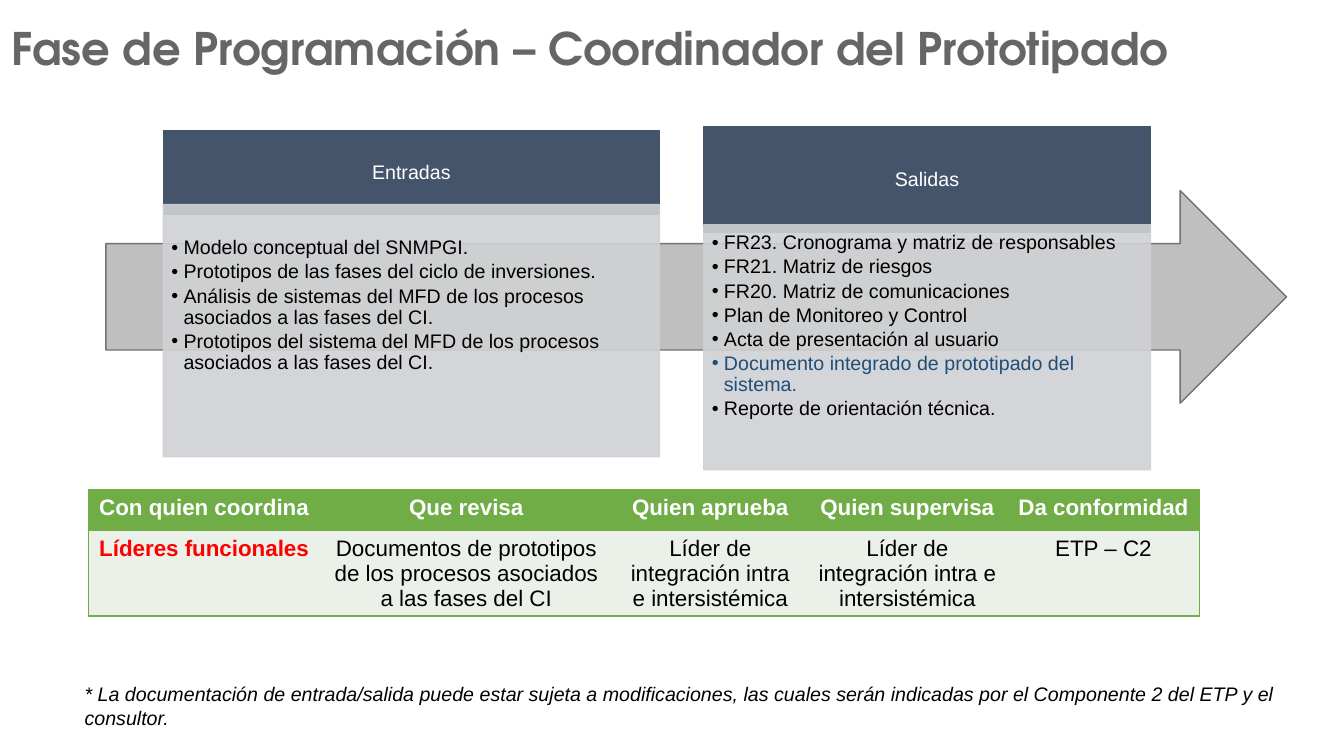
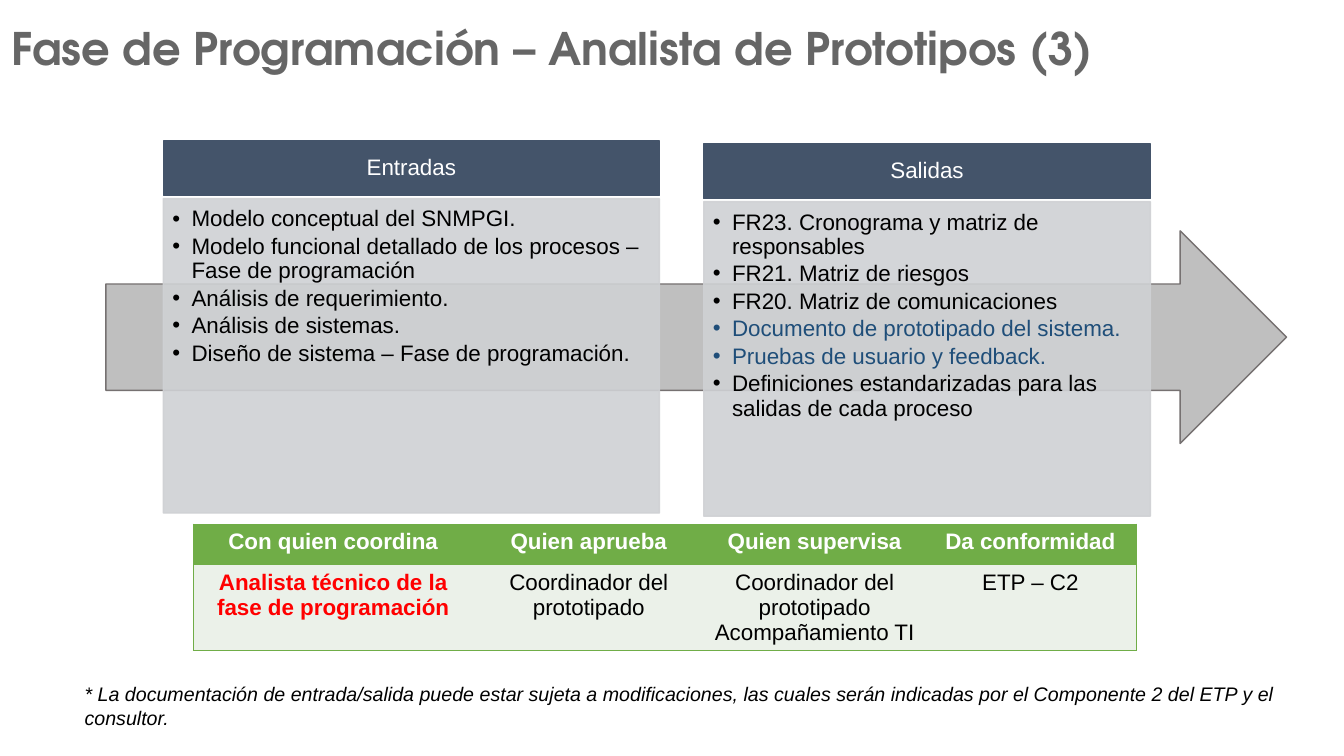
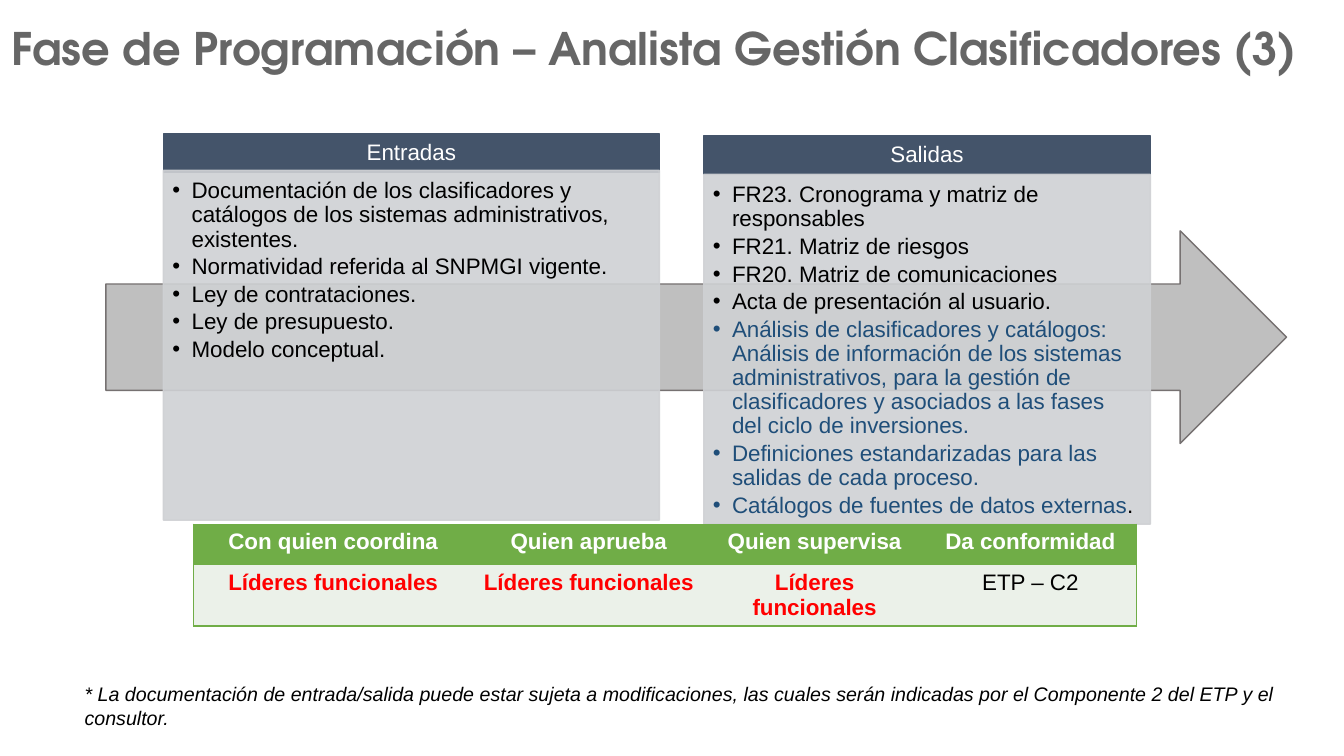
from dataclasses import dataclass

from lxml.etree import SubElement
from pptx import Presentation
from pptx.dml.color import RGBColor
from pptx.enum.shapes import MSO_SHAPE
from pptx.enum.text import MSO_ANCHOR, MSO_AUTO_SIZE, PP_ALIGN
from pptx.oxml.ns import qn
from pptx.util import Emu, Pt

EMU_PER_PX = 9144
COLORS = {
    "title": "666666", "arrow": "BFBFBF", "arrow_line": "767171",
    "header": "44546A", "panel": "CFD1D4", "white": "FFFFFF",
    "black": "000000", "blue": "1F4E79", "red": "FF0000",
    "green": "70AD47", "pale": "EBF1E9",
}
BODY_FONT, TITLE_FONT = "Arial", "TeX Gyre Adventor"
TWO_CONTENT_LAYOUT = 3
NO_STYLE_TABLE = "{2D5ABB26-0587-4C30-8999-92F81FD0307C}"
FOOTNOTE = (
    "* La documentación de entrada/salida puede estar sujeta a modificaciones, "
    "las cuales serán indicadas por el Componente 2 del ETP y el consultor."
)
COMMON_OUTPUTS = [
    "FR23. Cronograma y matriz de responsables",
    "FR21. Matriz de riesgos",
    "FR20. Matriz de comunicaciones",
]
ANALYST_TABLE = {
    "left": 192, "top": 520, "widths": (277, 230, 218, 210),
    "headings": ("Con quien coordina", "Quien aprueba", "Quien supervisa", "Da conformidad"),
}


@dataclass
class TextScale:
    """Text size of the panels with the insets and indent that go with it."""

    size: int
    header_insets: tuple
    panel_insets: tuple
    indent: int


@dataclass
class Block:
    """Top and height of a header and its panel, with the listed items."""

    header: tuple
    panel: tuple
    items: list
    drop: int = 0


SMALL = TextScale(14, (11, 6, 11, 6), (8, 8, 11, 12), 12)
LARGE = TextScale(16, (12, 7, 12, 7), (9, 9, 12, 14), 19)


def px(value):
    """Turn px into EMU."""
    return Emu(value * EMU_PER_PX)


def color(name):
    """Return the named colour."""
    return RGBColor.from_string(COLORS[name])


def paint(shape, fill, line):
    """Give a shape a solid fill and a 1 pt line."""
    shape.fill.solid()
    shape.fill.fore_color.rgb = color(fill)
    shape.line.color.rgb = color(line)
    shape.line.width = Pt(1)


def place(shape, left, top, width, height):
    """Set the position and size of a shape."""
    shape.left, shape.top = px(left), px(top)
    shape.width, shape.height = px(width), px(height)


def set_opacity(shape, percent):
    """Make the fill and line of a shape partly transparent."""
    for element in list(shape.element.spPr.iter(qn("a:srgbClr"))):
        SubElement(element, qn("a:alpha"), val=str(percent * 1000))


def set_frame(frame, insets, anchor):
    """Set wrapping, insets (left, top, right, bottom) and anchor."""
    frame.word_wrap = True
    frame.auto_size = MSO_AUTO_SIZE.NONE
    frame.vertical_anchor = anchor
    frame.margin_left, frame.margin_top, frame.margin_right, frame.margin_bottom = map(px, insets)


def write(paragraph, text, size=16, ink="black", font=BODY_FONT, bold=False,
          italic=False, align=PP_ALIGN.LEFT):
    """Add a formatted run to a paragraph."""
    paragraph.alignment = align
    run = paragraph.add_run()
    run.text = text
    run.font.name, run.font.size = font, Pt(size)
    run.font.bold, run.font.italic = bold, italic
    run.font.color.rgb = color(ink)


def next_paragraph(frame, index):
    """Return the first paragraph of a frame or a new one."""
    return frame.add_paragraph() if index else frame.paragraphs[0]


def add_title(slide, text):
    """Fill the title placeholder."""
    title = slide.shapes.title
    place(title, 1, -4, 1332, 102)
    set_frame(title.text_frame, (10, 10, 10, 10), MSO_ANCHOR.MIDDLE)
    write(title.text_frame.paragraphs[0], text, size=32, ink="title", font=TITLE_FONT, bold=True)


def add_preset(slide, preset, box, fill, line):
    """Add a preset shape without shadow."""
    shape = slide.shapes.add_shape(preset, *map(px, box))
    shape.shadow.inherit = False
    paint(shape, fill, line)
    return shape


def add_header(slide, text, box, scale):
    """Add the dark band above a panel."""
    header = add_preset(slide, MSO_SHAPE.RECTANGLE, box, "header", "header")
    set_frame(header.text_frame, scale.header_insets, MSO_ANCHOR.MIDDLE)
    paragraph = header.text_frame.paragraphs[0]
    paragraph.line_spacing = 0.9
    write(paragraph, text, size=scale.size, ink="white", align=PP_ALIGN.CENTER)


def fill_panel(slide, panel, box, block, scale):
    """Turn a body placeholder into a translucent bulleted panel in front."""
    slide.shapes.element.append(panel.element)
    place(panel, *box)
    paint(panel, "panel", "panel")
    set_opacity(panel, 90)
    left, top, right, bottom = scale.panel_insets
    set_frame(panel.text_frame, (left, top + block.drop, right, bottom), MSO_ANCHOR.TOP)
    for index, item in enumerate(block.items):
        paragraph = next_paragraph(panel.text_frame, index)
        properties = paragraph._p.get_or_add_pPr()
        properties.set("marL", str(px(scale.indent)))
        properties.set("indent", str(px(-scale.indent)))
        paragraph.line_spacing = 0.9
        paragraph.space_before = Pt(0)
        paragraph.space_after = Pt(scale.size * 0.15)
        for text, ink in [(item, "black")] if isinstance(item, str) else item:
            write(paragraph, text, size=scale.size, ink=ink)


def add_flow(slide, arrow_top, scale, inputs, outputs):
    """Add the arrow and, over it, the input and output panels."""
    add_preset(slide, MSO_SHAPE.RIGHT_ARROW, (105, arrow_top, 1171, 211), "arrow", "arrow_line")
    bodies = [shape for shape in slide.placeholders if shape.placeholder_format.idx > 0]
    columns = [("Entradas", 162, 492, inputs), ("Salidas", 698, 443, outputs)]
    for body, (name, left, width, block) in zip(bodies, columns):
        header_top, header_height = block.header
        panel_top, panel_height = block.panel
        add_header(slide, name, (left, header_top, width, header_height), scale)
        fill_panel(slide, body, (left, panel_top, width, panel_height), block, scale)


def set_border(cell, side):
    """Draw one green 1 pt border of a cell."""
    line = SubElement(cell._tc.get_or_add_tcPr(), qn(f"a:ln{side}"), w=str(Pt(1)))
    solid = SubElement(line, qn("a:solidFill"))
    SubElement(solid, qn("a:srgbClr"), val=COLORS["green"])


def fill_cell(cell, text, fill, sides, ink, bold):
    """Border and fill a cell and write one centred paragraph per line."""
    for side in sides:
        set_border(cell, side)
    cell.fill.solid()
    cell.fill.fore_color.rgb = color(fill)
    for index, line in enumerate(text.split("\n")):
        write(next_paragraph(cell.text_frame, index), line, ink=ink, bold=bold,
              align=PP_ALIGN.CENTER)


def add_roles(slide, left, top, widths, body_height, headings, roles, red_count):
    """Add the table of roles, its first red_count roles in red."""
    heights = (41, body_height)
    frame = slide.shapes.add_table(2, len(widths), px(left), px(top),
                                   px(sum(widths)), px(sum(heights)))
    table = frame.table
    table.first_row = table.horz_banding = False
    for style in frame.element.iter(qn("a:tableStyleId")):
        style.text = NO_STYLE_TABLE
    for row, height in zip(table.rows, heights):
        row.height = px(height)
    last = len(widths) - 1
    for index, (width, heading, role) in enumerate(zip(widths, headings, roles)):
        table.columns[index].width = px(width)
        outer = {0: "L", last: "R"}.get(index, "")
        is_red = index < red_count
        fill_cell(table.cell(0, index), heading, "green", outer + "T", "white", True)
        fill_cell(table.cell(1, index), role, "pale", outer + "B",
                  "red" if is_red else "black", is_red)


def add_footnote(slide):
    """Add the shared note at the bottom."""
    box = slide.shapes.add_textbox(px(74), px(672), px(1202), px(57))
    set_frame(box.text_frame, (10, 5, 10, 5), MSO_ANCHOR.TOP)
    write(box.text_frame.paragraphs[0], FOOTNOTE, size=14, italic=True)


def add_phase_slide(presentation, title, flow, roles):
    """Add one slide with its title, flow, table of roles and note."""
    slide = presentation.slides.add_slide(presentation.slide_layouts[TWO_CONTENT_LAYOUT])
    add_title(slide, title)
    add_flow(slide, **flow)
    add_roles(slide, **roles)
    add_footnote(slide)


def add_coordinator(presentation):
    """Add the slide of the prototyping coordinator."""
    inputs = Block((130, 83), (203, 250), [
        "Modelo conceptual del SNMPGI.",
        "Prototipos de las fases del ciclo de inversiones.",
        "Análisis de sistemas del MFD de los procesos asociados a las fases del CI.",
        "Prototipos del sistema del MFD de los procesos asociados a las fases del CI.",
    ], drop=25)
    outputs = Block((126, 105), (223, 243), COMMON_OUTPUTS + [
        "Plan de Monitoreo y Control",
        "Acta de presentación al usuario",
        [("Documento integrado de prototipado del sistema.", "blue")],
        "Reporte de orientación técnica.",
    ])
    roles = {
        "left": 88, "top": 486, "widths": (229, 291, 193, 198, 191), "body_height": 84,
        "headings": ("Con quien coordina", "Que revisa", "Quien aprueba",
                     "Quien supervisa", "Da conformidad"),
        "roles": ("Líderes funcionales",
                  "Documentos de prototipos de los procesos asociados a las fases del CI",
                  "Líder de integración intra e intersistémica",
                  "Líder de integración intra e intersistémica",
                  "ETP – C2"),
        "red_count": 1,
    }
    flow = {"arrow_top": 189, "scale": SMALL, "inputs": inputs, "outputs": outputs}
    add_phase_slide(presentation, "Fase de Programación – Coordinador del Prototipado", flow, roles)


def add_prototype_analyst(presentation):
    """Add the slide of the prototype analysts."""
    inputs = Block((140, 54), (197, 312), [
        "Modelo conceptual del SNMPGI.",
        "Modelo funcional detallado de los procesos – Fase de programación",
        "Análisis de requerimiento.",
        "Análisis de sistemas.",
        "Diseño de sistema – Fase de programación.",
    ])
    outputs = Block((143, 54), (200, 312), COMMON_OUTPUTS + [
        [("Documento de prototipado del sistema.", "blue")],
        [("Pruebas de usuario y feedback.", "blue")],
        "Definiciones estandarizadas para las salidas de cada proceso",
    ])
    roles = ANALYST_TABLE | {
        "body_height": 84,
        "roles": ("Analista técnico de la fase de programación",
                  "Coordinador del prototipado",
                  "Coordinador del prototipado\nAcompañamiento TI",
                  "ETP – C2"),
        "red_count": 1,
    }
    flow = {"arrow_top": 229, "scale": LARGE, "inputs": inputs, "outputs": outputs}
    add_phase_slide(presentation, "Fase de Programación – Analista de Prototipos (3)", flow, roles)


def add_classifier_analyst(presentation):
    """Add the slide of the classifier management analysts."""
    inputs = Block((133, 38), (169, 347), [
        "Documentación de los clasificadores y catálogos de los sistemas "
        "administrativos, existentes.",
        "Normatividad referida al SNPMGI vigente.",
        "Ley de contrataciones.",
        "Ley de presupuesto.",
        "Modelo conceptual.",
    ])
    outputs = Block((135, 38), (173, 347), COMMON_OUTPUTS + [
        "Acta de presentación al usuario.",
        [("Análisis de clasificadores y catálogos: Análisis de información de los "
          "sistemas administrativos, para la gestión de clasificadores y asociados "
          "a las fases del ciclo de inversiones.", "blue")],
        [("Definiciones estandarizadas para las salidas de cada proceso.", "blue")],
        [("Catálogos de fuentes de datos externas", "blue"), (".", "black")],
    ])
    roles = ANALYST_TABLE | {
        "body_height": 60,
        "roles": ("Líderes funcionales",) * 3 + ("ETP – C2",),
        "red_count": 3,
    }
    flow = {"arrow_top": 229, "scale": LARGE, "inputs": inputs, "outputs": outputs}
    add_phase_slide(presentation, "Fase de Programación – Analista Gestión Clasificadores (3)",
                    flow, roles)


def main():
    """Build and save the presentation."""
    presentation = Presentation()
    presentation.slide_width, presentation.slide_height = px(1333), px(750)
    add_coordinator(presentation)
    add_prototype_analyst(presentation)
    add_classifier_analyst(presentation)
    presentation.save("out.pptx")


if __name__ == "__main__":
    main()
